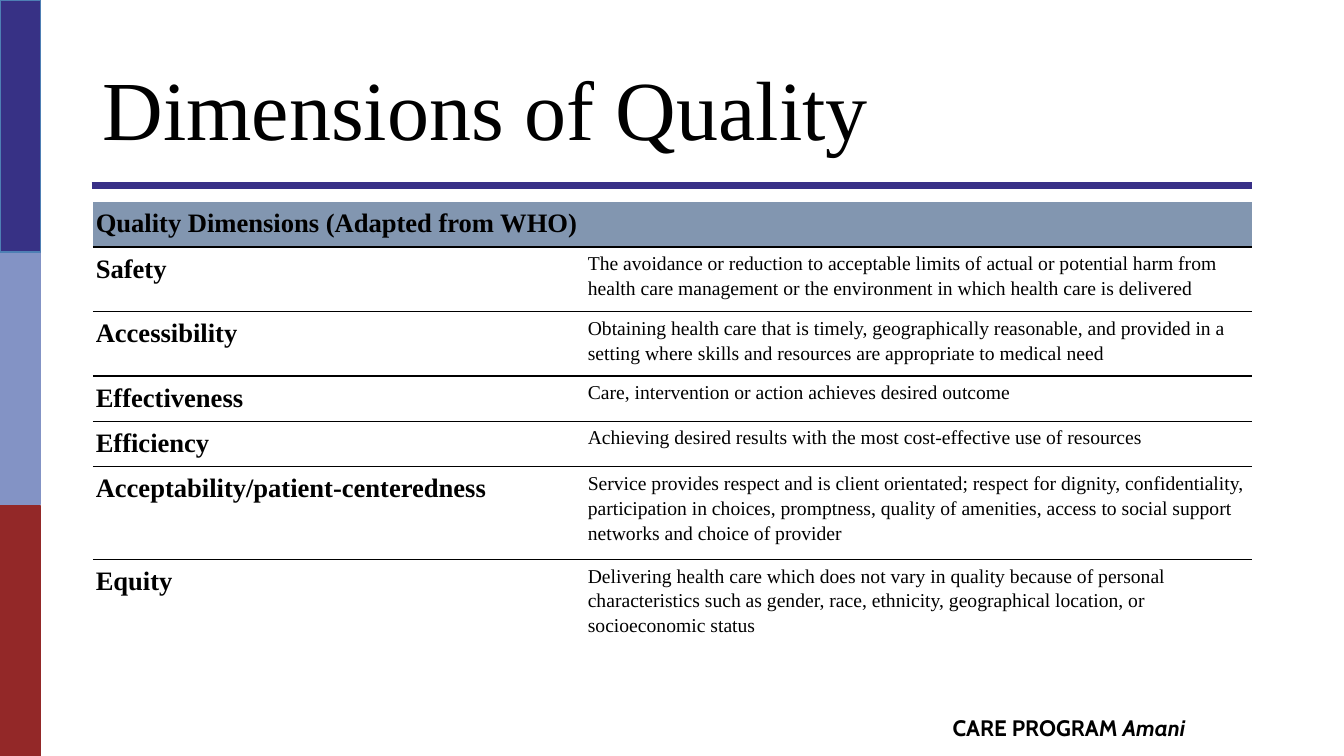
"""Build the Dimensions of Quality slide."""
from pptx import Presentation
from pptx.dml.color import RGBColor
from pptx.enum.shapes import MSO_CONNECTOR, MSO_SHAPE
from pptx.enum.text import MSO_ANCHOR
from pptx.oxml import parse_xml
from pptx.oxml.ns import nsdecls, qn
from pptx.util import Inches, Pt

COLORS = {
    "black": "000000",
    "white": "FFFFFF",
    "purple": "373185",
    "purple_edge": "4E7FB4",
    "rule": "383087",
    "periwinkle": "8393C5",
    "red": "932828",
    "header": "8296B0",
}
SERIF = "Times New Roman"
PLAIN_TABLE = "{2D5ABB26-0587-4C30-8999-92F81FD0307C}"
HEADING = "Quality Dimensions (Adapted from WHO)"
DIMENSIONS = [
    ("Safety", "The avoidance or reduction to acceptable limits of actual or potential harm from "
     "health care management or the environment in which health care is delivered"),
    ("Accessibility", "Obtaining health care that is timely, geographically reasonable, and "
     "provided in a setting where skills and resources are appropriate to medical need"),
    ("Effectiveness", "Care, intervention or action achieves desired outcome"),
    ("Efficiency", "Achieving desired results with the most cost-effective use of resources"),
    ("Acceptability/patient-centeredness", "Service provides respect and is client orientated; "
     "respect for dignity, confidentiality, participation in choices, promptness, quality of "
     "amenities, access to social support networks and choice of provider"),
    ("Equity", "Delivering health care which does not vary in quality because of personal "
     "characteristics such as gender, race, ethnicity, geographical location, or "
     "socioeconomic status"),
]
COL_WIDTHS = [4.88, 6.62]
ROW_HEIGHTS = [0.45, 0.64, 0.64, 0.45, 0.45, 0.92, 0.64]


def rgb(name):
    return RGBColor.from_string(COLORS[name])


def add_run(p, text, size, font=SERIF, bold=False, italic=False):
    r = p.add_run()
    r.text = text
    r.font.size = Pt(size)
    r.font.name = font
    r.font.bold = bold
    r.font.italic = italic
    r.font.color.rgb = rgb("black")


def add_band(s, top, height, fill, edge):
    sp = s.shapes.add_shape(MSO_SHAPE.RECTANGLE, 0, Inches(top), Inches(0.4), Inches(height))
    sp.shadow.inherit = False
    sp.fill.solid()
    sp.fill.fore_color.rgb = rgb(fill)
    sp.line.color.rgb = rgb(edge)
    sp.line.width = Pt(1)


def add_rule(s, left, right, y):
    line = s.shapes.add_connector(
        MSO_CONNECTOR.STRAIGHT, Inches(left), Inches(y), Inches(right), Inches(y))
    line.line.color.rgb = rgb("rule")
    line.line.width = Pt(4.5)
    line._element.spPr.append(parse_xml(f"<a:effectLst {nsdecls('a')}/>"))


def add_text(s, left, top, width, height, anchor=MSO_ANCHOR.TOP):
    box = s.shapes.add_textbox(Inches(left), Inches(top), Inches(width), Inches(height))
    tf = box.text_frame
    tf.word_wrap = True
    tf.vertical_anchor = anchor
    return tf.paragraphs[0]


def style_cell(cell, fill, underlined):
    cell.margin_left = cell.margin_right = Inches(0.03)
    cell.margin_top = cell.margin_bottom = Inches(0.03)
    cell.fill.solid()
    cell.fill.fore_color.rgb = rgb(fill)
    if underlined:
        cell._tc.get_or_add_tcPr().insert(0, parse_xml(
            f'<a:lnB {nsdecls("a")} w="{Pt(1)}"><a:solidFill>'
            f'<a:srgbClr val="{COLORS["black"]}"/></a:solidFill></a:lnB>'))


def write_cell(cell, text, size, bold):
    p = cell.text_frame.paragraphs[0]
    p.line_spacing = 1.15
    add_run(p, text, size, bold=bold)


def add_dimensions_table(s, left, top):
    frame = s.shapes.add_table(
        len(ROW_HEIGHTS), len(COL_WIDTHS), Inches(left), Inches(top),
        Inches(sum(COL_WIDTHS)), Inches(sum(ROW_HEIGHTS)))
    table = frame.table
    table.horz_banding = False
    table._tbl.tblPr.find(qn("a:tableStyleId")).text = PLAIN_TABLE
    for col, width in zip(table.columns, COL_WIDTHS):
        col.width = Inches(width)
    for i, (row, height) in enumerate(zip(table.rows, ROW_HEIGHTS)):
        row.height = Inches(height)
        for cell in row.cells:
            style_cell(cell, "white" if i else "header", i < len(DIMENSIONS))
    table.cell(0, 0).merge(table.cell(0, 1))
    write_cell(table.cell(0, 0), HEADING, 19, True)
    for i, (name, meaning) in enumerate(DIMENSIONS, 1):
        write_cell(table.cell(i, 0), name, 19, True)
        write_cell(table.cell(i, 1), meaning, 14, False)


def main():
    prs = Presentation()
    prs.slide_width, prs.slide_height = Inches(13.33), Inches(7.5)
    s = prs.slides.add_slide(prs.slide_layouts[6])
    add_band(s, 2.5, 2.5, "periwinkle", "periwinkle")
    add_band(s, 5.02, 2.48, "red", "red")
    add_band(s, 0, 2.5, "purple", "purple_edge")
    add_rule(s, 0.91, 12.42, 1.84)

    footer = add_text(s, 9.35, 7.04, 3.83, 0.36)
    add_run(footer, "CARE PROGRAM ", 16, "Cabin", bold=True)
    add_run(footer, "Amani", 16, "Cabin", bold=True, italic=True)

    title = add_text(s, 0.92, 0.4, 11.5, 1.45, MSO_ANCHOR.MIDDLE)
    title.line_spacing = 0.9
    add_run(title, "Dimensions of Quality", 60)

    add_dimensions_table(s, 0.92, 2)
    prs.save("out.pptx")


if __name__ == "__main__":
    main()
